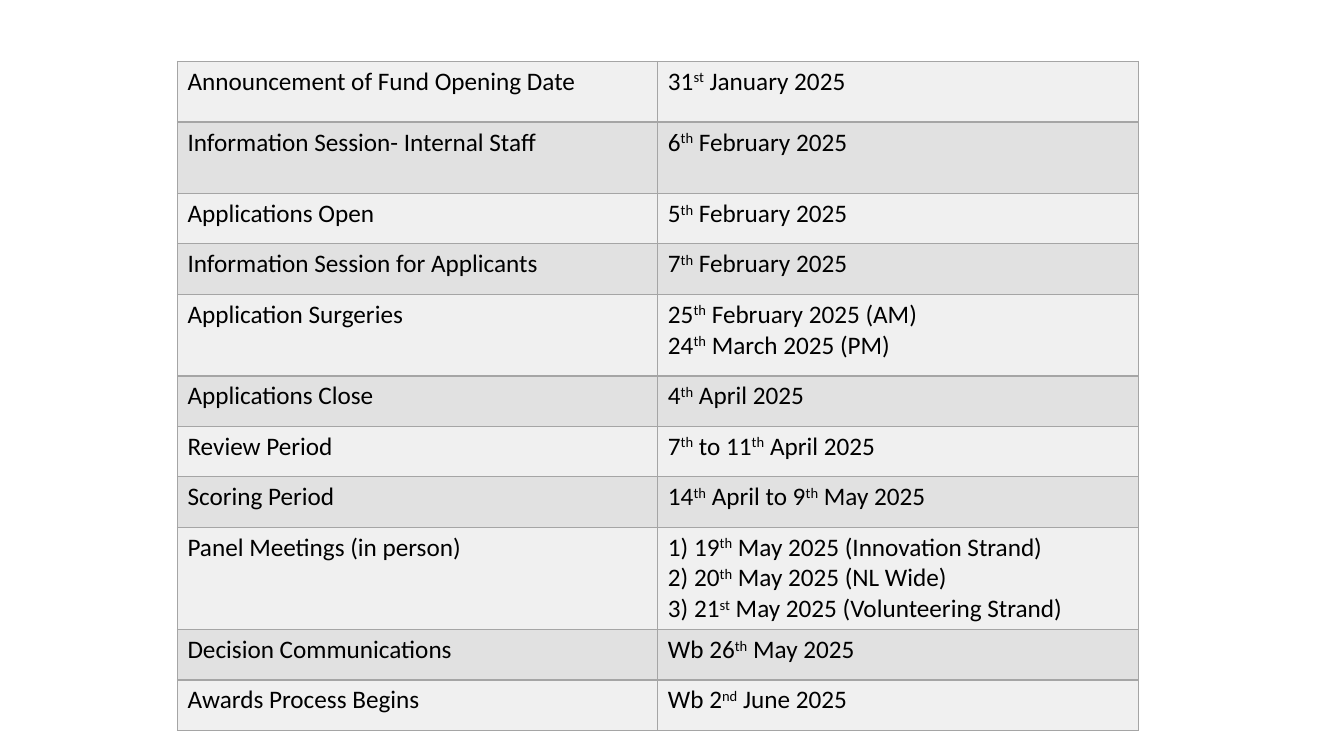
from lxml import etree
from pptx import Presentation
from pptx.dml.color import RGBColor
from pptx.oxml.ns import qn
from pptx.util import Inches, Pt

BLANK_LAYOUT = 6
BAND_FILLS = ("F0F0F0", "E1E1E1")
BORDER = "A5A5A5"
TIMELINE = [
    (0.6, "Announcement of Fund Opening Date", ["31^st^ January 2025"]),
    (0.71, "Information Session- Internal Staff", ["6^th^ February 2025"]),
    (0.5, "Applications Open", ["5^th^ February 2025"]),
    (0.5, "Information Session for Applicants", ["7^th^ February 2025"]),
    (0.81, "Application Surgeries",
     ["25^th^ February 2025 (AM)", "24^th^ March 2025 (PM)"]),
    (0.5, "Applications Close", ["4^th^ April 2025"]),
    (0.5, "Review Period", ["7^th^ to 11^th^ April 2025"]),
    (0.5, "Scoring Period", ["14^th^ April to 9^th^ May 2025"]),
    (1.01, "Panel Meetings (in person)",
     ["1) 19^th^ May 2025 (Innovation Strand)",
      "2) 20^th^ May 2025 (NL Wide)",
      "3) 21^st^ May 2025 (Volunteering Strand)"]),
    (0.5, "Decision Communications", ["Wb 26^th^ May 2025"]),
    (0.5, "Awards Process Begins", ["Wb 2^nd^ June 2025"]),
]


def color(value):
    return RGBColor.from_string(value)


def add_borders(cell):
    properties = cell._tc.get_or_add_tcPr()
    for side in ("a:lnL", "a:lnR", "a:lnT", "a:lnB"):
        line = etree.SubElement(properties, qn(side), w=str(Pt(1)))
        fill = etree.SubElement(line, qn("a:solidFill"))
        etree.SubElement(fill, qn("a:srgbClr"), val=BORDER)


def write_line(paragraph, text):
    paragraph.font.name = "Calibri"
    paragraph.font.size = Pt(18)
    paragraph.font.color.rgb = color("000000")
    for position, part in enumerate(text.split("^")):
        run = paragraph.add_run()
        run.text = part
        if position % 2:
            run._r.get_or_add_rPr().set("baseline", "30000")


def fill_cell(cell, lines, band):
    add_borders(cell)
    cell.fill.solid()
    cell.fill.fore_color.rgb = color(band)
    frame = cell.text_frame
    for position, text in enumerate(lines):
        write_line(frame.add_paragraph() if position else frame.paragraphs[0], text)


def add_timeline(slide, left, top, width):
    height = sum(row_height for row_height, _, _ in TIMELINE)
    timeline = slide.shapes.add_table(
        len(TIMELINE), 2, Inches(left), Inches(top), Inches(width), Inches(height)
    ).table
    timeline.first_row = False
    timeline.horz_banding = False
    for index, (row_height, stage, dates) in enumerate(TIMELINE):
        timeline.rows[index].height = Inches(row_height)
        band = BAND_FILLS[index % 2]
        fill_cell(timeline.cell(index, 0), [stage], band)
        fill_cell(timeline.cell(index, 1), dates, band)


def main():
    deck = Presentation()
    deck.slide_width = Inches(13.33)
    deck.slide_height = Inches(7.5)
    slide = deck.slides.add_slide(deck.slide_layouts[BLANK_LAYOUT])
    add_timeline(slide, 1.76, 0.61, 9.53)
    deck.save("out.pptx")


if __name__ == "__main__":
    main()
